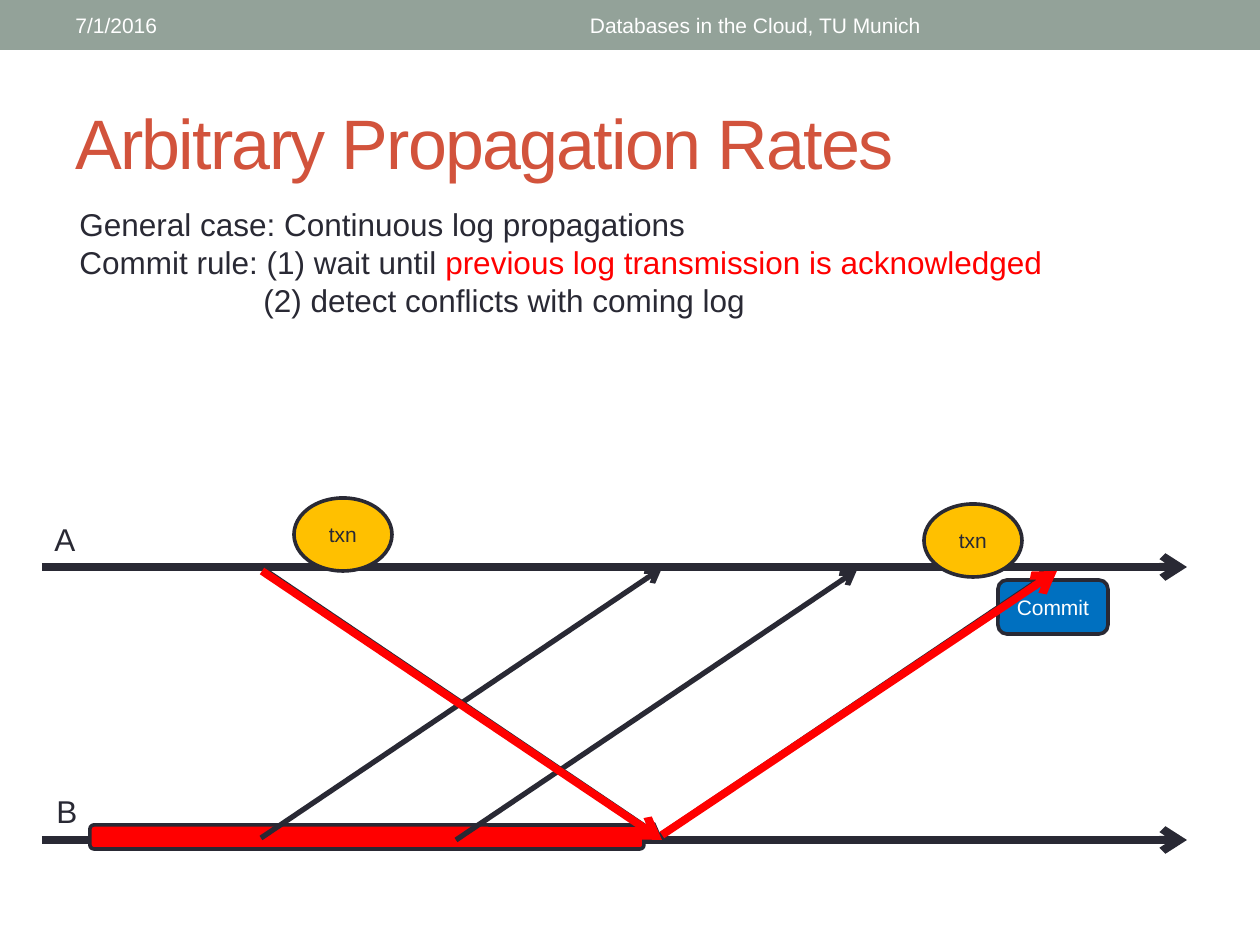
from lxml import etree
from pptx import Presentation
from pptx.dml.color import RGBColor
from pptx.enum.shapes import MSO_CONNECTOR, MSO_SHAPE
from pptx.enum.text import MSO_ANCHOR, PP_ALIGN
from pptx.oxml.ns import qn
from pptx.util import Pt

EMU_PER_PX = 914400 / 126
FONT = "Arial"
COLORS = {
    "band": "93A299", "title": "D2533C", "ink": "292934", "white": "FFFFFF",
    "red": "FF0000", "amber": "FFC000", "blue": "0070C0",
}
STRAIGHT = MSO_CONNECTOR.STRAIGHT
RECTANGLE, ROUNDED, OVAL = MSO_SHAPE.RECTANGLE, MSO_SHAPE.ROUNDED_RECTANGLE, MSO_SHAPE.OVAL
TOP, MIDDLE = MSO_ANCHOR.TOP, MSO_ANCHOR.MIDDLE
LEFT, CENTER = PP_ALIGN.LEFT, PP_ALIGN.CENTER

TIMELINE_A, TIMELINE_B = 567, 840


def px(*lengths):
    return [round(length * EMU_PER_PX) for length in lengths]


def rgb(name):
    return RGBColor.from_string(COLORS[name])


def write_text(frame, lines, size=12, color="ink", align=LEFT, anchor=TOP,
               wrap=True, tracking=None, indents=()):
    """Each line is a list of (text, color) runs, or a plain string."""
    frame.word_wrap = wrap
    frame.vertical_anchor = anchor
    for index, line in enumerate(lines):
        paragraph = frame.paragraphs[0] if index == 0 else frame.add_paragraph()
        paragraph.alignment = align
        if index < len(indents) and indents[index]:
            paragraph._p.get_or_add_pPr().set("marL", str(px(indents[index])[0]))
        for text, run_color in [(line, color)] if isinstance(line, str) else line:
            run = paragraph.add_run()
            run.text = text
            run.font.name = FONT
            run.font.size = Pt(size)
            run.font.color.rgb = rgb(run_color)
            if tracking is not None:
                run._r.get_or_add_rPr().set("spc", str(tracking * 100))


def add_text(slide, box, lines, **text_format):
    shape = slide.shapes.add_textbox(*px(*box))
    write_text(shape.text_frame, lines, **text_format)


def add_block(slide, kind, box, fill, text=None, text_color="ink", outlined=True):
    shape = slide.shapes.add_shape(kind, *px(*box))
    shape.shadow.inherit = False
    shape.fill.solid()
    shape.fill.fore_color.rgb = rgb(fill)
    if outlined:
        shape.line.color.rgb = rgb("ink")
        shape.line.width = Pt(2.08)
    else:
        shape.line.fill.background()
    if text:
        write_text(shape.text_frame, [text], color=text_color, align=CENTER, anchor=MIDDLE)


def add_arrow(slide, start, end, color="ink", width=3.0):
    connector = slide.shapes.add_connector(STRAIGHT, *px(*start, *end))
    connector.line.color.rgb = rgb(color)
    connector.line.width = Pt(width)
    line = connector.line._get_or_add_ln()
    etree.SubElement(line, qn("a:tailEnd"), type="arrow")
    etree.SubElement(connector._element.spPr, qn("a:effectLst"))


def add_transaction(slide, left, top):
    add_block(slide, OVAL, (left, top, 98, 73), "amber", "txn")


def main():
    presentation = Presentation()
    presentation.slide_width, presentation.slide_height = px(1260, 945)
    slide = presentation.slides.add_slide(presentation.slide_layouts[6])

    # Header band and title
    add_block(slide, RECTANGLE, (0, 0, 1260, 50), "band", outlined=False)
    add_text(slide, (63, 73, 1134, 136), ["Arbitrary Propagation Rates"],
             size=40, color="title", anchor=MIDDLE, tracking=-1)
    add_text(slide, (63, 3, 399, 45), ["7/1/2016"], color="white", anchor=MIDDLE)
    add_text(slide, (472, 3, 567, 45), ["Databases in the Cloud, TU Munich"],
             color="white", align=CENTER, anchor=MIDDLE)

    # Timelines of the two sites
    for name, left, top, line_y in (("A", 42, 514, TIMELINE_A), ("B", 44, 786, TIMELINE_B)):
        add_arrow(slide, (42, line_y), (1187, line_y), width=4.5)
        add_text(slide, (left, top, 47, 50), [name], size=18, wrap=False)

    # First log transmission and the commit rule
    add_arrow(slide, (262, 568), (662, 838))
    add_text(slide, (67, 199, 1077, 127), [
        "General case: Continuous log propagations",
        [("Commit rule: (1) wait until ", "ink"),
         ("previous log transmission is acknowledged", "red")],
        "(2) detect conflicts with coming log",
    ], size=18, indents=(0, 0, 184))

    # Transaction, commit and the conflict window on B
    add_transaction(slide, 294, 498)
    add_block(slide, ROUNDED, (998, 580, 110, 54), "blue", "Commit", "white")
    add_block(slide, ROUNDED, (90, 825, 554, 24), "red")

    # Log propagations from B to A
    for start_x, start_y in ((261, 838), (456, 840), (656, 838)):
        add_arrow(slide, (start_x, start_y), (start_x + 401, start_y - 270))

    # Transmission and its acknowledgement
    add_arrow(slide, (262, 571), (662, 840), color="red", width=4.5)
    add_arrow(slide, (662, 835), (1057, 571), color="red", width=4.5)
    add_transaction(slide, 924, 504)

    presentation.save("out.pptx")


if __name__ == "__main__":
    main()
